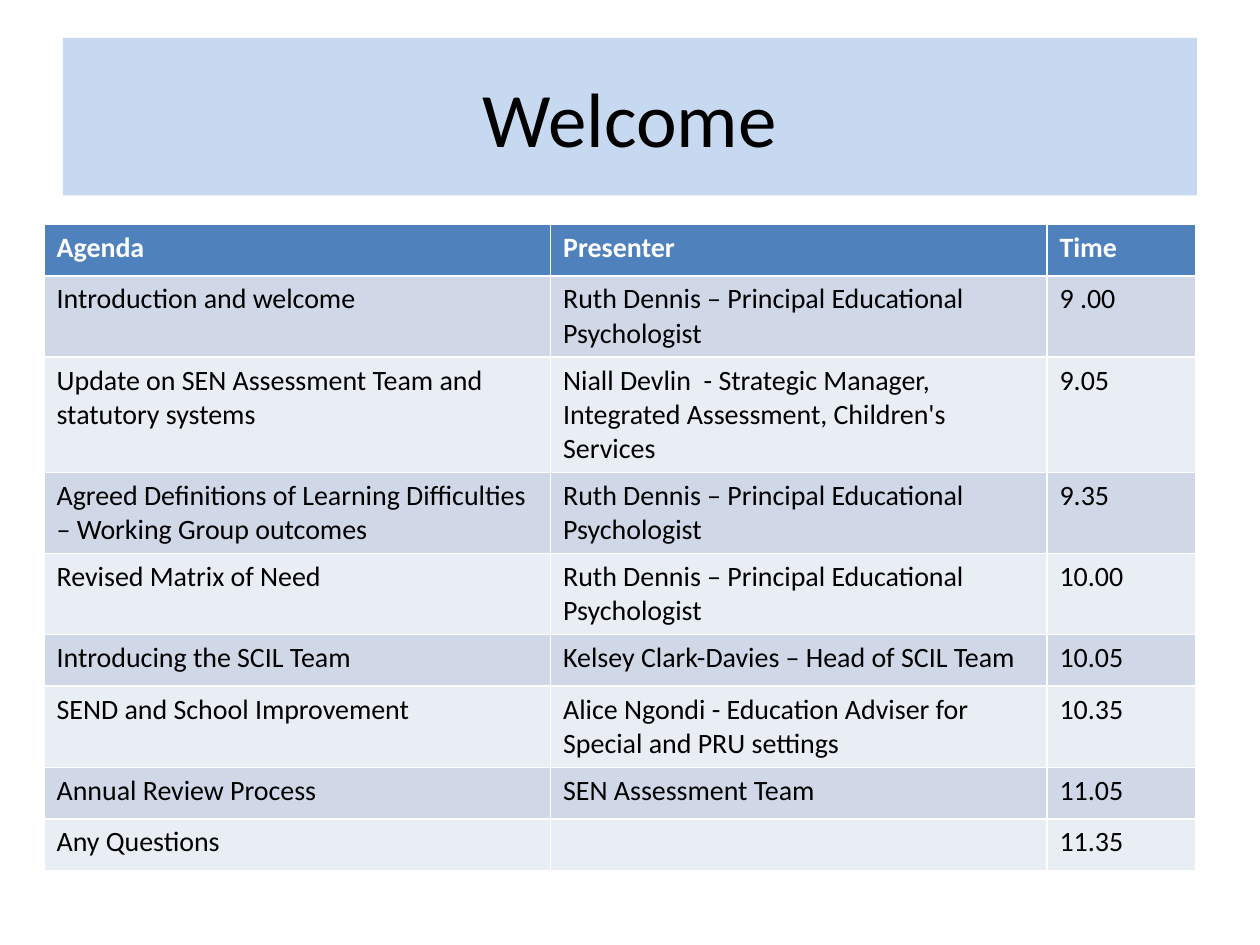
from typing import NamedTuple

import pptx
import pptx.dml.color
import pptx.enum.shapes
import pptx.enum.text
import pptx.util

Inches = pptx.util.Inches
ALIGN = pptx.enum.text.PP_ALIGN

FONT = "Calibri"
BLACK, WHITE = "000000", "FFFFFF"
TITLE_FILL, HEADER_FILL = "C6D9F1", "4F81BD"
BAND_FILLS = ("D0D8E8", "E9EDF4")
COLUMN_WIDTHS = (4.02, 3.94, 1.18)
ROW_HEIGHT = 0.41


class Item(NamedTuple):
    agenda: str
    presenter: str
    time: str


HEADER = Item("Agenda", "Presenter", "Time")
PRINCIPAL = "Ruth Dennis – Principal Educational Psychologist"
ITEMS = (
    Item("Introduction and welcome", PRINCIPAL, "9 .00"),
    Item("Update on SEN Assessment Team and statutory systems",
         "Niall Devlin  - Strategic Manager, Integrated Assessment, Children's Services",
         "9.05"),
    Item("Agreed Definitions of Learning Difficulties – Working Group outcomes",
         PRINCIPAL, "9.35"),
    Item("Revised Matrix of Need", PRINCIPAL, "10.00"),
    Item("Introducing the SCIL Team", "Kelsey Clark-Davies – Head of SCIL Team", "10.05"),
    Item("SEND and School Improvement",
         "Alice Ngondi - Education Adviser for Special and PRU settings", "10.35"),
    Item("Annual Review Process", "SEN Assessment Team", "11.05"),
    Item("Any Questions", "", "11.35"),
)


def set_fill(target, color: str) -> None:
    target.fill.solid()
    target.fill.fore_color.rgb = rgb(color)


def rgb(color: str) -> pptx.dml.color.RGBColor:
    return pptx.dml.color.RGBColor.from_string(color)


def write(tf, text: str, *, size: float = 16, color: str = BLACK,
          bold: bool = False, align=ALIGN.LEFT) -> None:
    p = tf.paragraphs[0]
    p.alignment = align
    if not text:
        return
    r = p.add_run()
    r.text = text
    r.font.name = FONT
    r.font.size = pptx.util.Pt(size)
    r.font.bold = bold
    r.font.color.rgb = rgb(color)


def add_title(s, text: str) -> None:
    sp = s.shapes.add_shape(pptx.enum.shapes.MSO_SHAPE.RECTANGLE,
                            Inches(0.5), Inches(0.3), Inches(9), Inches(1.25))
    sp.shadow.inherit = False
    sp.line.fill.background()
    set_fill(sp, TITLE_FILL)
    tf = sp.text_frame
    tf.word_wrap = True
    tf.vertical_anchor = pptx.enum.text.MSO_ANCHOR.MIDDLE
    write(tf, text, size=44, align=ALIGN.CENTER)


def fill_row(row, item: Item, fill: str, **text_format) -> None:
    row.height = Inches(ROW_HEIGHT)
    for cell, text in zip(row.cells, item):
        set_fill(cell, fill)
        write(cell.text_frame, text, **text_format)


def add_agenda(s) -> None:
    """Add the agenda table; its default style draws the white cell borders."""
    count = len(ITEMS) + 1
    table = s.shapes.add_table(
        count, len(COLUMN_WIDTHS), Inches(0.35), Inches(1.78),
        Inches(sum(COLUMN_WIDTHS)), Inches(ROW_HEIGHT * count)).table
    for column, width in zip(table.columns, COLUMN_WIDTHS):
        column.width = Inches(width)
    fill_row(table.rows[0], HEADER, HEADER_FILL, color=WHITE, bold=True)
    for i, item in enumerate(ITEMS):
        fill_row(table.rows[i + 1], item, BAND_FILLS[i % 2])


def main() -> None:
    prs = pptx.Presentation()
    prs.slide_width, prs.slide_height = Inches(10), Inches(7.5)
    s = prs.slides.add_slide(prs.slide_layouts[6])
    add_title(s, "Welcome")
    add_agenda(s)
    prs.save("out.pptx")


if __name__ == "__main__":
    main()
